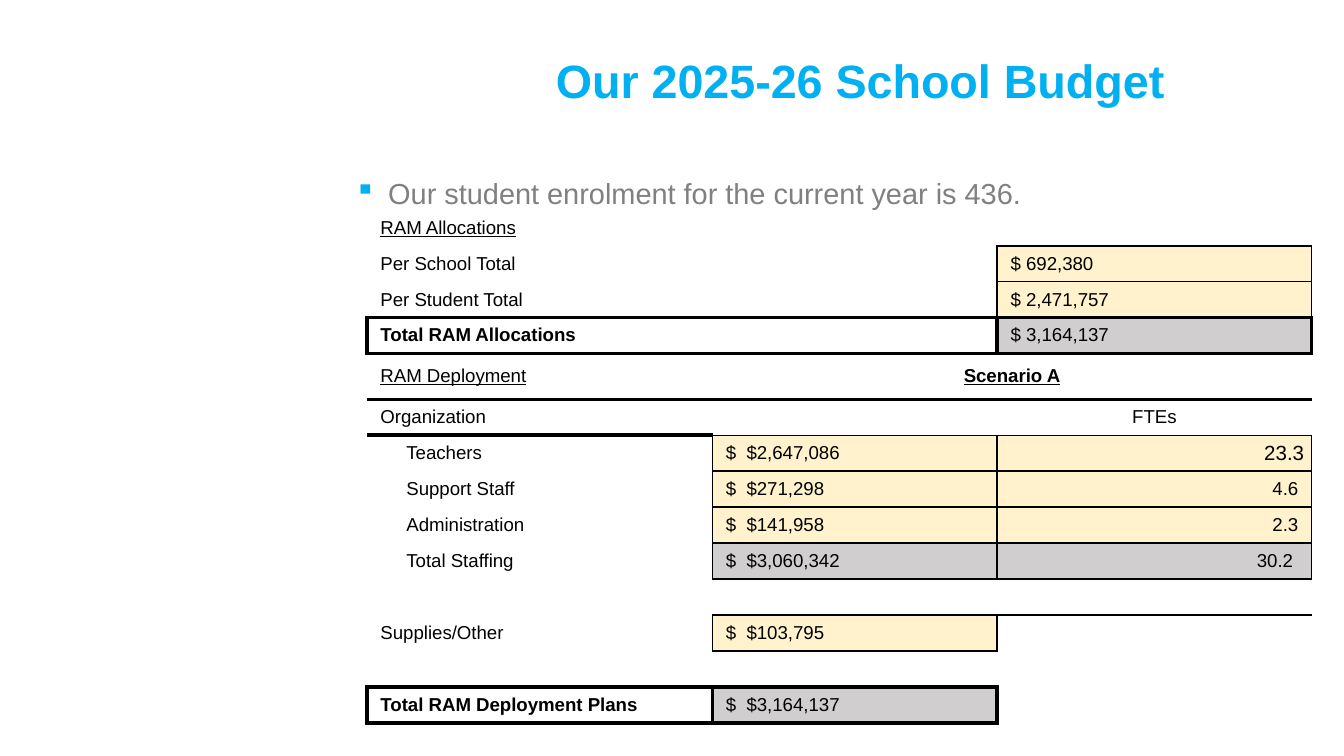
from lxml.etree import SubElement
from pptx import Presentation
from pptx.dml.color import RGBColor
from pptx.enum.text import MSO_ANCHOR, PP_ALIGN
from pptx.oxml.ns import qn
from pptx.util import Pt

# Content
TITLE = "Our 2025-26 School Budget"
ENROLMENT = "Our student enrolment for the current year is 436."
BUDGET = [
    ("RAM Allocations", "", ""),
    ("Per School Total", "", "$ 692,380"),
    ("Per Student Total", "", "$ 2,471,757"),
    ("Total RAM Allocations", "", "$ 3,164,137"),
    ("RAM Deployment", "Scenario A", ""),
    ("Organization", "", "FTEs"),
    ("Teachers", "$\t$2,647,086", "23.3"),
    ("Support Staff", "$\t$271,298", "4.6"),
    ("Administration", "$\t$141,958", "2.3"),
    ("Total Staffing", "$\t$3,060,342", "30.2"),
    ("", "", ""),
    ("Supplies/Other", "$\t$103,795", ""),
    ("", "", ""),
    ("Total RAM Deployment Plans", "$\t$3,164,137", ""),
]
COLORS = {"accent": "00B0F0", "gray": "808080", "black": "000000",
          "input": "FFF2CC", "total": "D0CECE"}
FONT = "Arial"

# Cell roles, as (row, column)
STAFFING = range(6, 10)
HEADING_ROW = 4
MERGED = [((0, 0), (0, 2)), ((4, 1), (4, 2))]
UNDERLINED = {(0, 0), (4, 0), (4, 1)}
BOLD = {(3, 0), (4, 1), (13, 0)}
CENTERED = {(4, 1), (5, 2)}
FTES = {(row, 2) for row in STAFFING}
TOTALS = {(3, 2), (9, 1), (9, 2), (13, 1)}
INPUTS = {(1, 2), (2, 2), (11, 1)} | {(r, c) for r in STAFFING for c in (1, 2)} - TOTALS
THIN, THICK = 1, 2.25
THICK_BOXES = [[(3, 0), (3, 1)], [(3, 2)], [(13, 0)], [(13, 1)]]

COLUMN_WIDTHS = (185, 152.6, 168.5)
ROW_HEIGHT, HEADING_HEIGHT = 19.2, 24.6
SIDES = {"L": (0, -1, "R"), "R": (0, 1, "L"), "T": (-1, 0, "B"), "B": (1, 0, "T")}


def style(paragraph, size, color, bold=False, underline=False):
    for run in paragraph.runs:
        font = run.font
        font.name, font.size = FONT, Pt(size)
        font.bold, font.underline = bold, underline
        font.color.rgb = RGBColor.from_string(COLORS[color])


def add_text(slide, text, left, top, width, height):
    box = slide.shapes.add_textbox(Pt(left), Pt(top), Pt(width), Pt(height))
    box.text_frame.word_wrap = True
    box.text_frame.text = text
    paragraph = box.text_frame.paragraphs[0]
    paragraph.line_spacing = 0.9
    return box.text_frame, paragraph


def outline(edges, cells, width):
    """Border a group of cells, on both cells that share each edge."""
    for row, column in cells:
        for side, (down, across, opposite) in SIDES.items():
            neighbour = (row + down, column + across)
            if neighbour not in cells:
                edges[(row, column), side] = width
                edges[neighbour, opposite] = width


def draw_borders(cell, place, edges):
    properties = cell._tc.get_or_add_tcPr()
    for side in SIDES:
        if (place, side) in edges:
            line = SubElement(properties, qn(f"a:ln{side}"), w=str(Pt(edges[place, side])))
            fill = SubElement(line, qn("a:solidFill"))
            SubElement(fill, qn("a:srgbClr"), val=COLORS["black"])


presentation = Presentation()
presentation.slide_width, presentation.slide_height = Pt(720), Pt(405)
slide = presentation.slides.add_slide(presentation.slide_layouts[6])

# Enrolment bullet
frame, enrolment = add_text(slide, ENROLMENT, 185, 63.4, 517, 341.3)
frame.margin_left = frame.margin_right = Pt(5)
frame.margin_top = Pt(32.6)
properties = enrolment._p.get_or_add_pPr()
properties.set("marL", str(Pt(18)))
properties.set("indent", str(Pt(-18)))
bullet_color = SubElement(properties, qn("a:buClr"))
SubElement(bullet_color, qn("a:srgbClr"), val=COLORS["accent"])
SubElement(properties, qn("a:buChar"), char="▪")
style(enrolment, 15.5, "gray")

# Budget table
heights = [HEADING_HEIGHT if row == HEADING_ROW else ROW_HEIGHT for row in range(len(BUDGET))]
budget = slide.shapes.add_table(len(BUDGET), len(COLUMN_WIDTHS), Pt(196.6), Pt(112.4),
                                Pt(sum(COLUMN_WIDTHS)), Pt(sum(heights))).table
budget.first_row = budget.horz_banding = False
# "No Style, No Grid"
budget._tbl.tblPr.find(qn("a:tableStyleId")).text = "{2D5ABB26-0587-4C30-8999-92F81FD0307C}"
for column, width in zip(budget.columns, COLUMN_WIDTHS):
    column.width = Pt(width)
for row, height in zip(budget.rows, heights):
    row.height = Pt(height)
for first, last in MERGED:
    budget.cell(*first).merge(budget.cell(*last))

# Borders: thin around every filled cell, then the thick ones over them
edges = {}
for place in INPUTS | TOTALS:
    outline(edges, [place], THIN)
for box in THICK_BOXES:
    outline(edges, box, THICK)
for column in range(len(COLUMN_WIDTHS)):
    edges[(HEADING_ROW, column), "B"] = THICK
    edges[(HEADING_ROW + 1, column), "T"] = THICK

# Cells
for row, texts in enumerate(BUDGET):
    for column, text in enumerate(texts):
        place = (row, column)
        cell = budget.cell(row, column)
        cell.vertical_anchor = MSO_ANCHOR.MIDDLE
        draw_borders(cell, place, edges)
        if place in INPUTS | TOTALS:
            cell.fill.solid()
            shade = "total" if place in TOTALS else "input"
            cell.fill.fore_color.rgb = RGBColor.from_string(COLORS[shade])
        else:
            cell.fill.background()
        paragraph = cell.text_frame.paragraphs[0]
        if not text:
            SubElement(paragraph._p, qn("a:endParaRPr"), sz="1000")
            continue
        paragraph.text = text
        if "\t" in text:
            tabs = SubElement(paragraph._p.get_or_add_pPr(), qn("a:tabLst"))
            SubElement(tabs, qn("a:tab"), pos=str(Pt(11.1)), algn="l")
        if place in CENTERED:
            paragraph.alignment = PP_ALIGN.CENTER
        elif place in FTES:
            paragraph.alignment = PP_ALIGN.RIGHT
        if column == 0 and row in STAFFING:
            paragraph._p.get_or_add_pPr().set("marL", str(Pt(13.9)))
        style(paragraph, 10, "black", place in BOLD, place in UNDERLINED)

# Teacher and total FTEs sit off the common right margin
teachers, staffing_total = budget.cell(6, 2), budget.cell(9, 2)
teachers.vertical_anchor = MSO_ANCHOR.BOTTOM
teachers.margin_left = teachers.margin_top = Pt(0.7)
teachers.margin_right = Pt(4)
style(teachers.text_frame.paragraphs[0], 11, "black")
staffing_total.margin_right = Pt(10)

# Title
frame, title = add_text(slide, TITLE, 201.6, 27.4, 518.4, 71.3)
title.alignment = PP_ALIGN.CENTER
style(title, 25, "accent", bold=True)

presentation.save("out.pptx")
